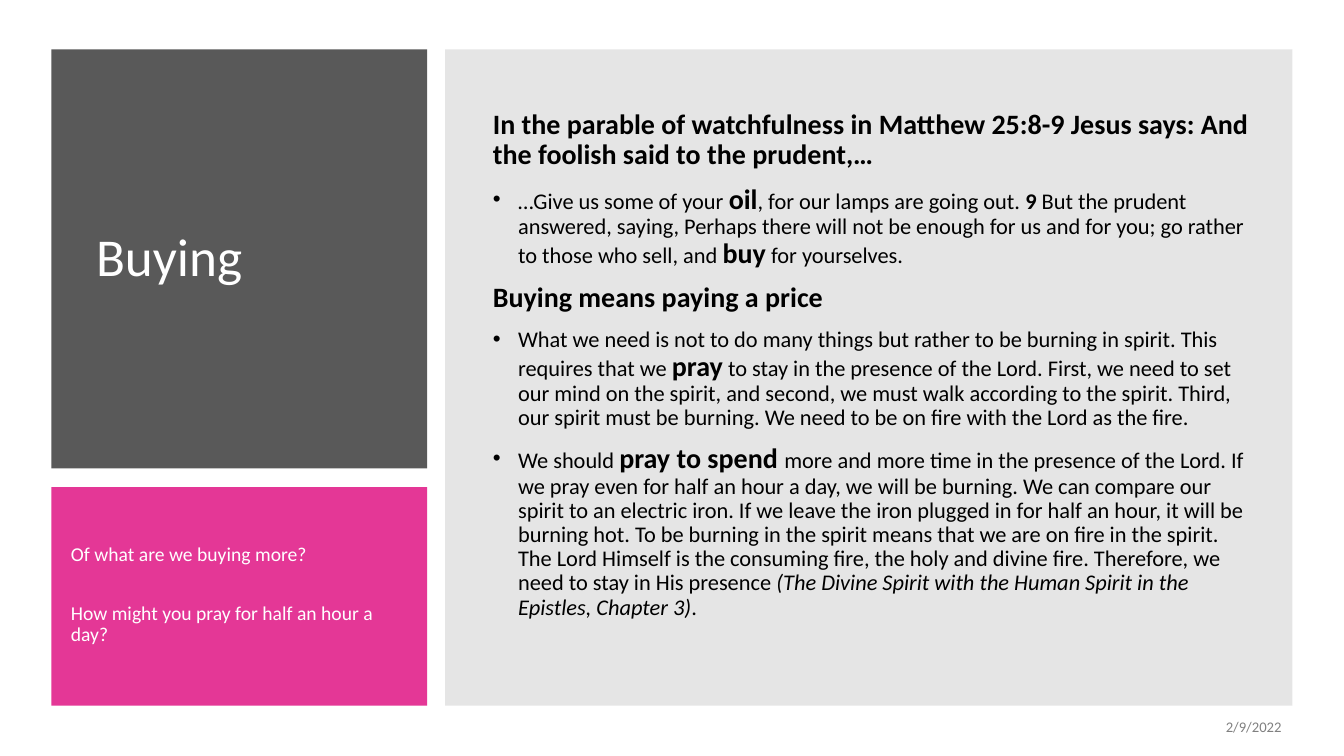
from dataclasses import dataclass

from lxml.etree import SubElement
from pptx import Presentation
from pptx.dml.color import RGBColor
from pptx.enum.shapes import MSO_SHAPE
from pptx.enum.text import MSO_ANCHOR, PP_ALIGN
from pptx.oxml.ns import qn
from pptx.slide import Slide
from pptx.util import Emu, Pt

PX = 9525
FONT = "Calibri"
WHITE = RGBColor(0xFF, 0xFF, 0xFF)
BLACK = RGBColor(0x00, 0x00, 0x00)
GRAY = RGBColor(0x80, 0x80, 0x80)
CHARCOAL = RGBColor(0x59, 0x59, 0x59)
PINK = RGBColor(0xE3, 0x2D, 0x91)


def px(length: int) -> Emu:
    return Emu(length * PX)


@dataclass(frozen=True)
class Area:
    left: int
    top: int
    width: int
    height: int

    def emu(self) -> tuple[Emu, Emu, Emu, Emu]:
        return px(self.left), px(self.top), px(self.width), px(self.height)


@dataclass(frozen=True)
class Panel:
    area: Area
    color: RGBColor
    opacity: int = 100


@dataclass(frozen=True)
class Span:
    text: str
    size: float = 16
    bold: bool = False
    italic: bool = False


@dataclass(frozen=True)
class Para:
    spans: list[Span]
    bullet: bool = False
    before: float = 0
    after: float = 0
    line_spacing: float = 0.9
    align: PP_ALIGN = PP_ALIGN.LEFT


@dataclass(frozen=True)
class TextBlock:
    area: Area
    color: RGBColor
    paras: list[Para]
    bottom_inset: int = 5


def strong(text: str) -> Span:
    return Span(text, 20, bold=True)


def heading(text: str) -> Para:
    return Para([strong(text)], before=10)


def bullet(*spans: Span) -> Para:
    return Para(list(spans), bullet=True, before=10)


PANELS = [
    Panel(Area(49, 47, 358, 399), CHARCOAL),
    Panel(Area(49, 464, 358, 208), PINK, 95),
    Panel(Area(424, 47, 807, 625), GRAY, 20),
]

TITLE = TextBlock(Area(82, 77, 299, 340), WHITE, [Para([Span("Buying", 38)])])

BODY = TextBlock(Area(460, 72, 739, 575), BLACK, [
    heading("In the parable of watchfulness in Matthew 25:8-9 Jesus says: "
            "And the foolish said to the prudent,…"),
    bullet(
        Span("…Give us some of your "),
        strong("oil"),
        Span(", for our lamps are going out. "),
        Span("9", bold=True),
        Span(" But the prudent answered, saying, Perhaps there will not be enough "
             "for us and for you; go rather to those who sell, and "),
        strong("buy"),
        Span(" for yourselves."),
    ),
    heading("Buying means paying a price"),
    bullet(
        Span("What we need is not to do many things but rather to be burning in "
             "spirit. This requires that we "),
        strong("pray"),
        Span(" to stay in the presence of the Lord. First, we need to set our mind "
             "on the spirit, and second, we must walk according to the spirit. "
             "Third, our spirit must be burning. We need to be on fire with the "
             "Lord as the fire."),
    ),
    bullet(
        Span("We should "),
        strong("pray to spend "),
        Span("more and more time in the presence of the Lord. If we pray even for "
             "half an hour a day, we will be burning. We can compare our spirit to "
             "an electric iron. If we leave the iron plugged in for half an hour, "
             "it will be burning hot. To be burning in the spirit means that we "
             "are on fire in the spirit. The Lord Himself is the consuming fire, "
             "the holy and divine fire. Therefore, we need to stay in His presence "),
        Span("(The Divine Spirit with the Human Spirit in the Epistles, Chapter 3)",
             italic=True),
        Span("."),
    ),
], bottom_inset=28)

QUESTIONS = TextBlock(Area(58, 471, 342, 192), WHITE, [
    Para([Span("Of what are we buying more?", 14)], after=27.4),
    Para([Span("How might you pray for half an hour a day?", 14)], after=6),
])

DATE = TextBlock(Area(942, 673, 288, 38), GRAY, [
    Para([Span("2/9/2022", 10.5)], after=6, line_spacing=1, align=PP_ALIGN.RIGHT),
])


def add_panel(page: Slide, panel: Panel) -> None:
    box = page.shapes.add_shape(MSO_SHAPE.RECTANGLE, *panel.area.emu())
    box.shadow.inherit = False
    box.line.fill.background()
    box.fill.solid()
    box.fill.fore_color.rgb = panel.color
    if panel.opacity < 100:
        color = box.fill._xPr.find(qn("a:solidFill"))[0]
        SubElement(color, qn("a:alpha")).set("val", str(panel.opacity * 1000))


def add_bullet(paragraph) -> None:
    properties = paragraph._p.get_or_add_pPr()
    properties.set("marL", str(px(24)))
    properties.set("indent", str(px(-24)))
    SubElement(properties, qn("a:buFont")).set("typeface", "Arial")
    SubElement(properties, qn("a:buChar")).set("char", "•")


def add_text(page: Slide, block: TextBlock) -> None:
    frame = page.shapes.add_textbox(*block.area.emu()).text_frame
    frame.word_wrap = True
    frame.vertical_anchor = MSO_ANCHOR.MIDDLE
    frame.margin_bottom = px(block.bottom_inset)
    for index, para in enumerate(block.paras):
        paragraph = frame.add_paragraph() if index else frame.paragraphs[0]
        paragraph.alignment = para.align
        paragraph.line_spacing = para.line_spacing
        paragraph.space_before = Pt(para.before)
        paragraph.space_after = Pt(para.after)
        if para.bullet:
            add_bullet(paragraph)
        for span in para.spans:
            run = paragraph.add_run()
            run.text = span.text
            run.font.name = FONT
            run.font.size = Pt(span.size)
            run.font.bold = span.bold
            run.font.italic = span.italic
            run.font.color.rgb = block.color


def main() -> None:
    deck = Presentation()
    deck.slide_width, deck.slide_height = px(1280), px(720)
    page = deck.slides.add_slide(deck.slide_layouts[6])
    for panel in PANELS:
        add_panel(page, panel)
    for block in (TITLE, BODY, QUESTIONS, DATE):
        add_text(page, block)
    deck.save("out.pptx")


if __name__ == "__main__":
    main()
